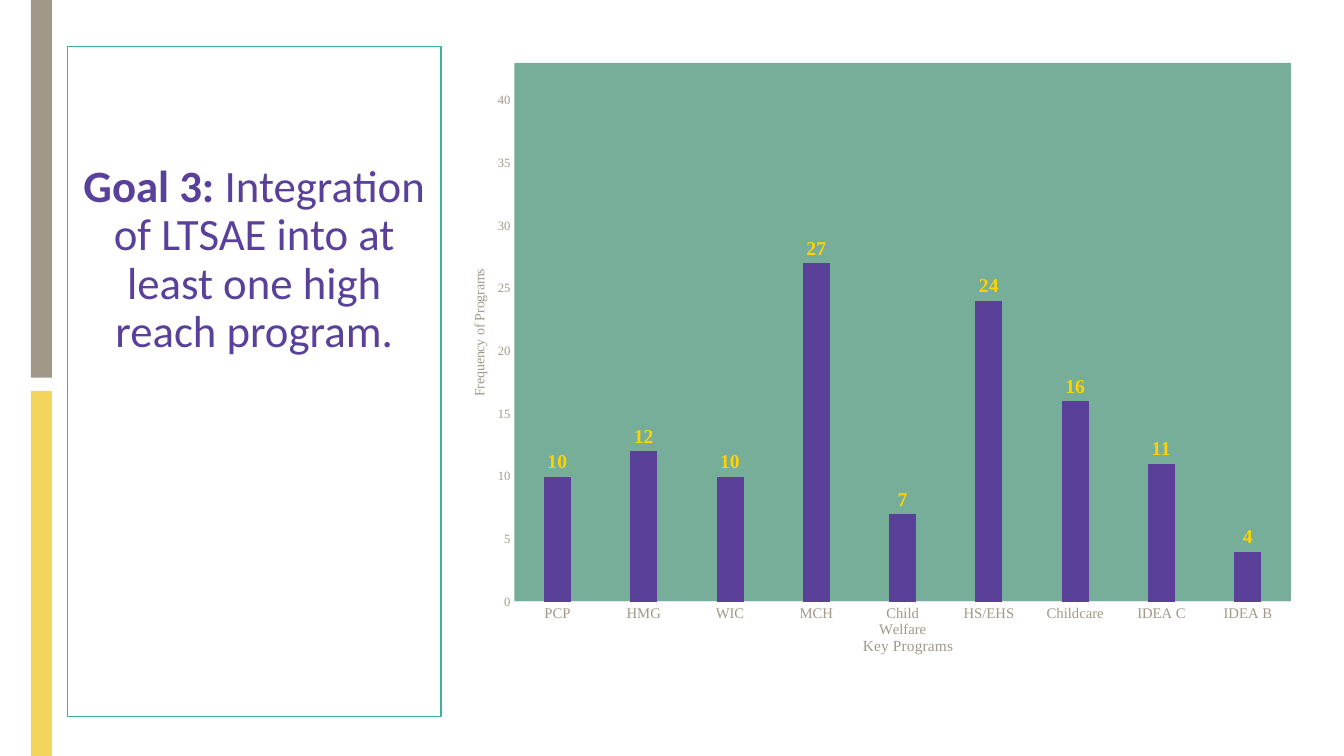
from dataclasses import dataclass

from lxml.etree import SubElement
from pptx import Presentation
from pptx.chart.data import CategoryChartData
from pptx.dml.color import RGBColor
from pptx.enum.chart import XL_CHART_TYPE, XL_LABEL_POSITION, XL_TICK_MARK
from pptx.enum.shapes import MSO_SHAPE
from pptx.enum.text import MSO_ANCHOR, PP_ALIGN
from pptx.oxml import parse_xml
from pptx.oxml.ns import nsdecls, qn
from pptx.util import Cm, Pt


@dataclass(frozen=True)
class Theme:
    taupe: str = "A2988A"
    yellow: str = "F3D55C"
    teal: str = "3FAEA3"
    purple: str = "59409B"
    column: str = "5A4099"
    plot: str = "76AE99"
    label: str = "FFD200"
    axis: str = "E5E0F2"
    white: str = "FFFFFF"
    goal_font: str = "Calibri"
    chart_font: str = "Times New Roman"
    goal_size: float = 32
    label_size: float = 14
    category_title_size: float = 11
    category_size: float = 10.5
    chart_size: float = 10
    value_size: float = 9


THEME = Theme()
PROGRAMS = {
    "PCP": 10, "HMG": 12, "WIC": 10, "MCH": 27, "Child Welfare": 7,
    "HS/EHS": 24, "Childcare": 16, "IDEA C": 11, "IDEA B": 4,
}


def style_font(font, name, size, color, bold=False):
    font.name = name
    font.size = Pt(size)
    font.bold = bold
    font.color.rgb = RGBColor.from_string(color)


def add_rectangle(slide, left, top, width, height, fill=None, line=None):
    shape = slide.shapes.add_shape(
        MSO_SHAPE.RECTANGLE, Cm(left), Cm(top), Cm(width), Cm(height))
    shape.shadow.inherit = False
    if fill:
        shape.fill.solid()
        shape.fill.fore_color.rgb = RGBColor.from_string(fill)
    else:
        shape.fill.background()
    if line:
        shape.line.color.rgb = RGBColor.from_string(line)
        shape.line.width = Pt(1)
    else:
        shape.line.fill.background()
    return shape


def add_goal(slide, heading, text):
    shape = add_rectangle(slide, 1.7, 1.17, 9.42, 16.89, line=THEME.teal)
    frame = shape.text_frame
    frame.word_wrap = True
    frame.vertical_anchor = MSO_ANCHOR.TOP
    frame.margin_top = Cm(2.95)
    paragraph = frame.paragraphs[0]
    paragraph.alignment = PP_ALIGN.CENTER
    paragraph.line_spacing = 0.9
    for words, bold in ((heading, True), (text, False)):
        run = paragraph.add_run()
        run.text = words
        style_font(run.font, THEME.goal_font, THEME.goal_size, THEME.purple, bold)


def set_layout(element, index, **settings):
    for layout in element.findall(qn("c:layout")):
        element.remove(layout)
    layout = parse_xml(f"<c:layout {nsdecls('c')}><c:manualLayout/></c:layout>")
    for name, value in settings.items():
        SubElement(layout[0], qn(f"c:{name}")).set("val", str(value))
    element.insert(index, layout)


def area_fill(color):
    return parse_xml(
        f'<c:spPr {nsdecls("c", "a")}><a:solidFill><a:srgbClr val="{color}"/>'
        "</a:solidFill><a:ln><a:noFill/></a:ln></c:spPr>")


def style_axis(axis, title, title_size, label_size, x, y):
    axis.has_major_gridlines = False
    axis.major_tick_mark = XL_TICK_MARK.NONE
    axis.minor_tick_mark = XL_TICK_MARK.NONE
    style_font(axis.tick_labels.font, THEME.chart_font, label_size, THEME.taupe)
    frame = axis.axis_title.text_frame
    frame.text = title
    style_font(frame.paragraphs[0].runs[0].font, THEME.chart_font, title_size, THEME.taupe)
    set_layout(axis.axis_title.element, 1, xMode="edge", yMode="edge", x=x, y=y)


def add_program_chart(slide):
    data = CategoryChartData()
    data.categories = list(PROGRAMS)
    data.add_series("Series 1", list(PROGRAMS.values()))
    chart = slide.shapes.add_chart(
        XL_CHART_TYPE.COLUMN_CLUSTERED,
        Cm(11.35), Cm(1.17), Cm(21.51), Cm(15.44), data).chart
    chart.has_title = False
    chart.has_legend = False
    style_font(chart.font, THEME.chart_font, THEME.chart_size, THEME.purple)

    category_axis, value_axis = chart.category_axis, chart.value_axis
    style_axis(category_axis, "Key Programs", THEME.category_title_size,
               THEME.category_size, 0.48, 0.96)
    category_axis.format.line.color.rgb = RGBColor.from_string(THEME.axis)
    category_axis.format.line.width = Pt(0.75)
    style_axis(value_axis, "Frequency of Programs", THEME.chart_size,
               THEME.value_size, 0.02, 0.36)
    value_axis.format.line.fill.background()
    value_axis.minimum_scale = 0
    value_axis.maximum_scale = 43
    value_axis.major_unit = 5
    body = value_axis.axis_title.element.find(".//" + qn("a:bodyPr"))
    body.set("rot", "-5400000")
    body.set("vert", "horz")

    plot = chart.plots[0]
    plot.gap_width = 219
    plot.overlap = -27
    plot.vary_by_categories = False
    series = plot.series[0]
    series.format.fill.solid()
    series.format.fill.fore_color.rgb = RGBColor.from_string(THEME.column)
    labels = series.data_labels
    labels.show_value = True
    labels.position = XL_LABEL_POSITION.OUTSIDE_END
    style_font(labels.font, THEME.chart_font, THEME.label_size, THEME.label, True)

    chart_element = chart.element.find(qn("c:chart"))
    chart_element.addnext(area_fill(THEME.white))
    plot_area = chart_element.find(qn("c:plotArea"))
    set_layout(plot_area, 0, layoutTarget="inner", xMode="edge", yMode="edge",
               x=0.075, y=0.027, w=0.91, h=0.882)
    plot_area.append(area_fill(THEME.plot))


def main():
    presentation = Presentation()
    presentation.slide_width = Cm(33.87)
    presentation.slide_height = Cm(19.05)
    slide = presentation.slides.add_slide(presentation.slide_layouts[6])
    add_rectangle(slide, 0.78, 0, 0.53, 9.52, fill=THEME.taupe)
    add_rectangle(slide, 0.78, 9.85, 0.53, 9.2, fill=THEME.yellow)
    add_goal(slide, "Goal 3:", " Integration of LTSAE into at least one high reach program.")
    add_program_chart(slide)
    presentation.save("out.pptx")


if __name__ == "__main__":
    main()
